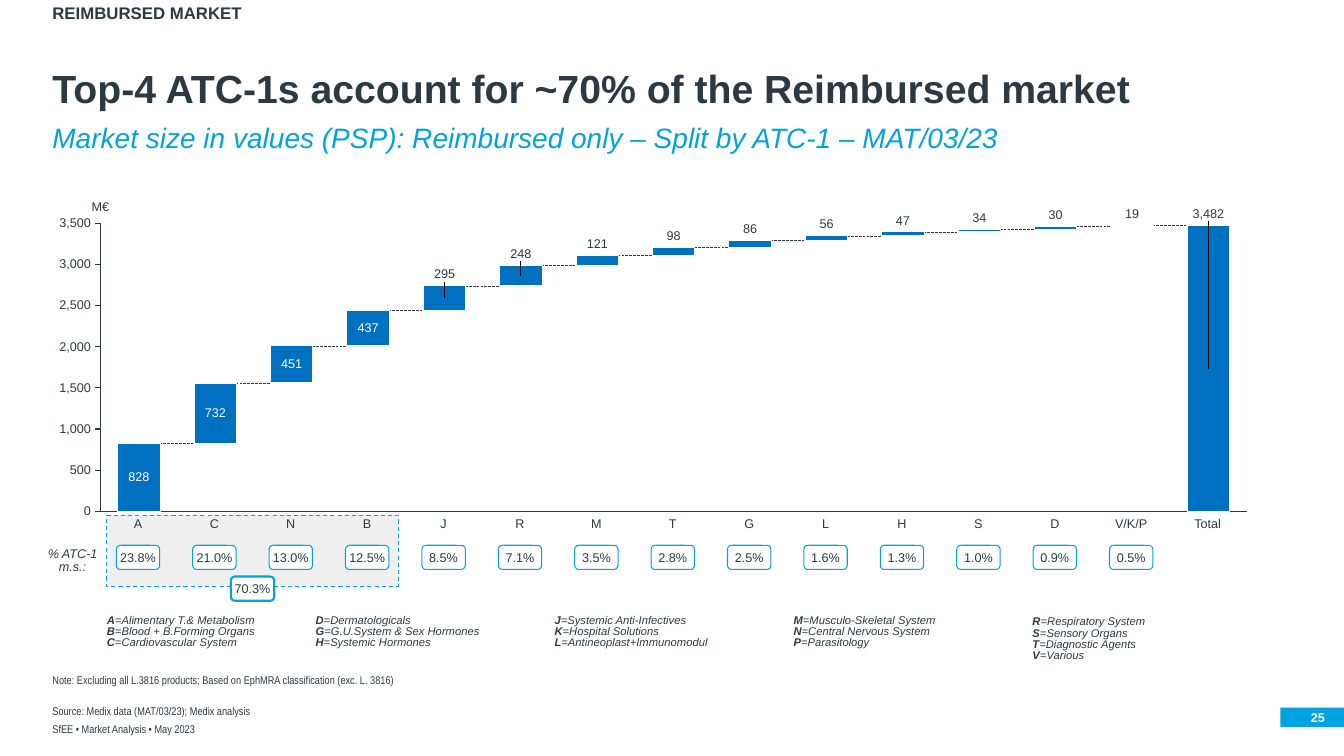
from dataclasses import dataclass
from itertools import accumulate

from lxml import etree
from pptx import Presentation
from pptx import util as u
from pptx.chart import data as chart_data
from pptx.dml.color import RGBColor
from pptx.enum import chart as ch
from pptx.enum import dml, shapes, text
from pptx.oxml import parse_xml
from pptx.oxml.ns import nsdecls, qn

SECTION = "REIMBURSED MARKET"
TITLE = "Top-4 ATC-1s account for ~70% of the Reimbursed market"
SUBTITLE = "Market size in values (PSP): Reimbursed only – Split by ATC-1 – MAT/03/23"
NOTE = "Note: Excluding all L.3816 products; Based on EphMRA classification (exc. L. 3816)"
SOURCE = "Source: Medix data (MAT/03/23); Medix analysis"
FOOTER = "SfEE • Market Analysis • May 2023"
PAGE = "25"
UNIT = "M€"
SHARE_HEADING = ["% ATC-1", "m.s.:"]
TOP_SHARE = "70.3%"
MARKET = [
    ("A", 828, "23.8%"), ("C", 732, "21.0%"), ("N", 451, "13.0%"),
    ("B", 437, "12.5%"), ("J", 295, "8.5%"), ("R", 248, "7.1%"),
    ("M", 121, "3.5%"), ("T", 98, "2.8%"), ("G", 86, "2.5%"),
    ("L", 56, "1.6%"), ("H", 47, "1.3%"), ("S", 34, "1.0%"),
    ("D", 30, "0.9%"), ("V/K/P", 19, "0.5%"),
]
LEGEND = [
    (1.06, 6.1, 0.34, ["A=Alimentary T.& Metabolism", "B=Blood + B.Forming Organs",
                       "C=Cardiovascular System"]),
    (3.13, 6.1, 0.34, ["D=Dermatologicals", "G=G.U.System & Sex Hormones",
                       "H=Systemic Hormones"]),
    (5.5, 6.1, 0.34, ["J=Systemic Anti-Infectives", "K=Hospital Solutions",
                      "L=Antineoplast+Immunomodul"]),
    (7.87, 6.1, 0.34, ["M=Musculo-Skeletal System", "N=Central Nervous System",
                       "P=Parasitology"]),
    (10.24, 6.11, 0.46, ["R=Respiratory System", "S=Sensory Organs",
                         "T=Diagnostic Agents", "V=Various"]),
]


@dataclass(frozen=True)
class Theme:
    ink: RGBColor = RGBColor.from_string("2B3A42")
    accent: RGBColor = RGBColor.from_string("00A3E0")
    bar: RGBColor = RGBColor.from_string("0070C0")
    band: RGBColor = RGBColor.from_string("D9D9D9")
    white: RGBColor = RGBColor.from_string("FFFFFF")
    face: str = "Arial"
    narrow: str = "Arial Narrow"
    title: int = 28
    subtitle: int = 20
    section: int = 12
    label: int = 9
    small: int = 8


T = Theme()
CHART_X, CHART_Y, CHART_W, CHART_H = 0.46, 2.03, 11.99, 3.14
PLOT = {"x": 0.045, "y": 0.06, "w": 0.948, "h": 0.909}
AXIS_MAX, GAP = 3500, 80
PLOT_H = PLOT["h"] * CHART_H
PLOT_BOTTOM = CHART_Y + PLOT["y"] * CHART_H + PLOT_H
PITCH = PLOT["w"] * CHART_W / (len(MARKET) + 1)
BAR_W = PITCH / (1 + GAP / 100)
INSIDE_LABELS = 4
LABEL_LIFT = 0.11

names = [name for name, _, _ in MARKET] + ["Total"]
sizes = [size for _, size, _ in MARKET]
running = list(accumulate(sizes))


def center(column):
    return 0.99 + PITCH * (column + 0.5)


def style(font, size, color=T.ink, face=T.face, bold=False, italic=False):
    font.size, font.name = u.Pt(size), face
    font.bold, font.italic = bold, italic
    font.color.rgb = color


def write(box, lines, size, align="LEFT", anchor="TOP", spacing=None, wrap=True, **look):
    frame = box.text_frame
    frame.margin_left = frame.margin_right = frame.margin_top = frame.margin_bottom = 0
    frame.word_wrap = wrap
    frame.auto_size = text.MSO_AUTO_SIZE.NONE
    frame.vertical_anchor = text.MSO_ANCHOR[anchor]
    for index, line in enumerate(lines):
        para = frame.add_paragraph() if index else frame.paragraphs[0]
        para.text = line
        para.alignment = text.PP_ALIGN[align]
        para.line_spacing = spacing
        style(para.font, size, **look)
    return frame


def label(slide, x, y, w, h, lines, size, **look):
    box = slide.shapes.add_textbox(*map(u.Inches, (x, y, w, h)))
    return write(box, lines, size, **look)


def panel(slide, kind, x, y, w, h, fill, line=None, weight=0.75):
    shape = slide.shapes.add_shape(shapes.MSO_SHAPE[kind], *map(u.Inches, (x, y, w, h)))
    shape.shadow.inherit = False
    shape.fill.solid()
    shape.fill.fore_color.rgb = fill
    if line is None:
        shape.line.fill.background()
    else:
        shape.line.color.rgb = line
        shape.line.width = u.Pt(weight)
    return shape


def chip(slide, middle, y, share, weight=0.75):
    box = panel(slide, "ROUNDED_RECTANGLE", middle - 0.215, y, 0.43, 0.24, T.white, T.accent, weight)
    write(box, [share], T.label, align="CENTER", anchor="MIDDLE", wrap=False)


def step_line(slide, column):
    y = u.Inches(PLOT_BOTTOM - running[column] / AXIS_MAX * PLOT_H)
    step = slide.shapes.add_connector(
        shapes.MSO_CONNECTOR.STRAIGHT, u.Inches(center(column) + BAR_W / 2), y,
        u.Inches(center(column + 1) - BAR_W / 2), y)
    step.line.color.rgb = T.ink
    step.line.width = u.Pt(0.25)
    step.line.dash_style = dml.MSO_LINE.LONG_DASH
    etree.SubElement(step._element.spPr, qn("a:effectLst"))


def manual_layout(**values):
    parts = "".join(f'<c:{key} val="{value}"/>' for key, value in values.items())
    return parse_xml(f'<c:layout {nsdecls("c")}><c:manualLayout>{parts}</c:manualLayout></c:layout>')


def paint(target):
    target.format.fill.solid()
    target.format.fill.fore_color.rgb = T.bar
    target.format.line.color.rgb = T.white
    target.format.line.width = u.Pt(0.75)


def value_label(series, column, size):
    inside = column < INSIDE_LABELS
    style(series.points[column].data_label.font, T.label, T.white if inside else T.ink)
    if not inside:
        lift = (size / AXIS_MAX * PLOT_H / 2 + LABEL_LIFT) / CHART_H
        for entry in series._element.iter(qn("c:dLbl")):
            if entry.find(qn("c:idx")).get("val") == str(column):
                entry.insert(1, manual_layout(x=0, y=round(-lift, 4)))


def waterfall(slide):
    data = chart_data.CategoryChartData(number_format="#,##0")
    data.categories = names
    data.add_series("Base", [running[0]] + running)
    data.add_series("Step", [None] + sizes[1:] + [None])
    chart = slide.shapes.add_chart(
        ch.XL_CHART_TYPE.COLUMN_STACKED,
        *map(u.Inches, (CHART_X, CHART_Y, CHART_W, CHART_H)), data).chart
    chart.has_legend = chart.has_title = False
    style(chart.font, T.label)
    plot = chart.plots[0]
    plot.gap_width, plot.overlap, plot.vary_by_categories = GAP, 100, False
    area = chart._chartSpace.chart.plotArea
    for old in area.findall(qn("c:layout")):
        area.remove(old)
    area.insert(0, manual_layout(layoutTarget="inner", xMode="edge", yMode="edge", **PLOT))

    for axis in (chart.category_axis, chart.value_axis):
        axis.has_major_gridlines = False
        axis.major_tick_mark = axis.minor_tick_mark = ch.XL_TICK_MARK.NONE
        axis.format.line.color.rgb = T.ink
        axis.format.line.width = u.Pt(0.75)
    chart.category_axis.tick_label_position = ch.XL_TICK_LABEL_POSITION.NONE
    scale = chart.value_axis
    scale.major_tick_mark = ch.XL_TICK_MARK.OUTSIDE
    scale.minimum_scale, scale.maximum_scale, scale.major_unit = 0, AXIS_MAX, 500
    scale.tick_labels.number_format = "#,##0"
    scale.tick_labels.number_format_is_linked = False
    style(scale.tick_labels.font, T.label)

    base, step = plot.series
    base.format.fill.background()
    base.format.line.fill.background()
    paint(step)
    for series in (base, step):
        series.data_labels.show_value = False
    for column, size in ((0, sizes[0]), (len(sizes), running[-1])):
        paint(base.points[column])
        value_label(base, column, size)
    for column in range(1, len(sizes)):
        value_label(step, column, sizes[column])


def main():
    deck = Presentation()
    deck.slide_width, deck.slide_height = u.Inches(13.33), u.Inches(7.5)
    slide = deck.slides.add_slide(deck.slide_layouts[5])

    title = slide.shapes.title
    title.left, title.top, title.width, title.height = map(u.Inches, (0.52, 0.26, 12.3, 0.85))
    write(title, [TITLE], T.title, anchor="BOTTOM", spacing=0.9, bold=True)
    label(slide, 0.52, 0.05, 12.3, 0.18, [SECTION], T.section, spacing=0.9, bold=True)
    label(slide, 0.52, 1.23, 12.3, 0.3, [SUBTITLE], T.subtitle, spacing=0.9,
          color=T.accent, italic=True)
    for y, line in ((6.69, NOTE), (7, SOURCE), (7.18, FOOTER)):
        label(slide, 0.52, y, 12.3, 0.12, [line], T.small, anchor="BOTTOM",
              spacing=0.9, face=T.narrow)
    panel(slide, "RECTANGLE", 12.7, 7.02, 0.63, 0.19, T.accent)
    label(slide, 12.7, 7.02, 0.44, 0.19, [PAGE], T.label, align="RIGHT", anchor="MIDDLE",
          color=T.white, bold=True)

    top_four = panel(slide, "RECTANGLE", 1.06, 5.11, 2.89, 0.71, T.band, T.accent)
    top_four.line.dash_style = dml.MSO_LINE.DASH
    tint = top_four._element.spPr.find(qn("a:solidFill"))[0]
    etree.SubElement(tint, qn("a:alpha"), val="40000")

    for column in range(len(MARKET)):
        step_line(slide, column)
    waterfall(slide)
    label(slide, 0.8, 1.97, 0.39, 0.15, [UNIT], T.label, align="CENTER", anchor="BOTTOM", wrap=False)
    for column, name in enumerate(names):
        label(slide, center(column) - 0.2, 5.12, 0.4, 0.15, [name], T.label,
              align="CENTER", wrap=False)
    for column, (_, _, share) in enumerate(MARKET):
        chip(slide, center(column), 5.41, share)
    chip(slide, 2.505, 5.72, TOP_SHARE, 1.5)
    label(slide, 0.38, 5.44, 0.68, 0.26, SHARE_HEADING, T.label, align="CENTER",
          spacing=0.85, italic=True)

    for x, y, h, entries in LEGEND:
        frame = label(slide, x, y, 2.09, h, [""] * len(entries), T.small, anchor="BOTTOM",
                      spacing=0.85, italic=True)
        for para, entry in zip(frame.paragraphs, entries):
            code = para.add_run()
            code.text, code.font.bold = entry[0], True
            para.add_run().text = entry[1:]
    deck.save("out.pptx")


if __name__ == "__main__":
    main()
